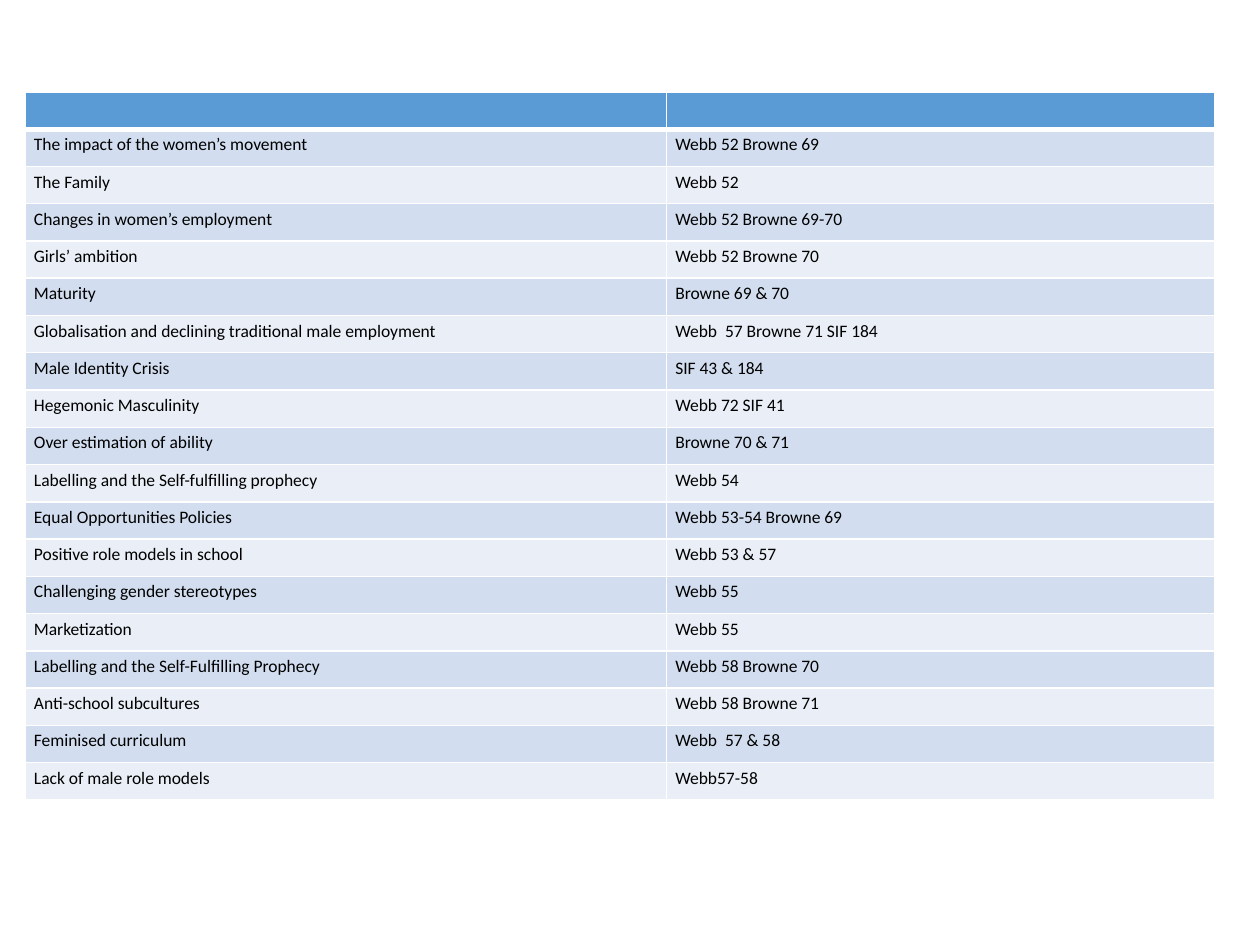
"""Build a slide that lists gender and education topics with their page references."""
from dataclasses import dataclass

from lxml.etree import SubElement
from pptx import Presentation
from pptx.dml.color import RGBColor
from pptx.oxml.ns import qn
from pptx.table import Table, _Cell
from pptx.util import Inches, Pt

COLORS = {"head": "5B9BD5", "dark": "D2DEEF", "light": "EAEFF7", "line": "FFFFFF", "text": "000000"}
FONT = {"name": "Calibri", "size": Pt(10), "bold": False}
INSETS = {
    "margin_left": Inches(0.07),
    "margin_right": Inches(0.07),
    "margin_top": Inches(0.04),
    "margin_bottom": Inches(0.04),
}
WIDTHS = (5.09, 4.35)
HEIGHT = 5.62


@dataclass(frozen=True)
class Topic:
    """A topic and the pages that cover it."""

    name: str = ""
    pages: str = ""


TOPICS = [
    Topic("The impact of the women’s movement", "Webb 52 Browne 69"),
    Topic("The Family", "Webb 52"),
    Topic("Changes in women’s employment", "Webb 52 Browne 69-70"),
    Topic("Girls’ ambition", "Webb 52 Browne 70"),
    Topic("Maturity", "Browne 69 & 70"),
    Topic("Globalisation and declining traditional male employment", "Webb  57 Browne 71 SIF 184"),
    Topic("Male Identity Crisis", "SIF 43 & 184"),
    Topic("Hegemonic Masculinity", "Webb 72 SIF 41"),
    Topic("Over estimation of ability", "Browne 70 & 71"),
    Topic("Labelling and the Self-fulfilling prophecy", "Webb 54"),
    Topic("Equal Opportunities Policies", "Webb 53-54 Browne 69"),
    Topic("Positive role models in school", "Webb 53 & 57"),
    Topic("Challenging gender stereotypes", "Webb 55"),
    Topic("Marketization", "Webb 55"),
    Topic("Labelling and the Self-Fulfilling Prophecy", "Webb 58 Browne 70"),
    Topic("Anti-school subcultures", "Webb 58 Browne 71"),
    Topic("Feminised curriculum", "Webb  57 & 58"),
    Topic("Lack of male role models", "Webb57-58"),
]


def set_edges(cell: _Cell, top: float, bottom: float) -> None:
    """Draw the four borders of a cell, with widths in points."""
    props = cell._tc.get_or_add_tcPr()
    for tag, width in {"lnL": 1, "lnR": 1, "lnT": top, "lnB": bottom}.items():
        line = SubElement(props, qn(f"a:{tag}"), w=str(Pt(width)))
        fill = SubElement(line, qn("a:solidFill"))
        SubElement(fill, qn("a:srgbClr"), val=COLORS["line"])


def set_text(cell: _Cell, text: str) -> None:
    """Write the text of a cell, or size its empty line."""
    for key, value in INSETS.items():
        setattr(cell, key, value)
    para = cell.text_frame.paragraphs[0]
    if not text:
        SubElement(para._p, qn("a:endParaRPr"), sz=str(int(FONT["size"].pt * 100)))
        return
    run = para.add_run()
    run.text = text
    for key, value in FONT.items():
        setattr(run.font, key, value)
    run.font.color.rgb = RGBColor.from_string(COLORS["text"])


def draw_row(table: Table, index: int, topic: Topic) -> None:
    """Fill one table row; the first row is the header band."""
    shade = "head" if index == 0 else "dark" if index % 2 else "light"
    for col, text in enumerate((topic.name, topic.pages)):
        cell = table.cell(index, col)
        set_edges(cell, top=3 if index == 1 else 1, bottom=3 if index == 0 else 1)
        cell.fill.solid()
        cell.fill.fore_color.rgb = RGBColor.from_string(COLORS[shade])
        set_text(cell, text)


def main() -> None:
    """Create the deck and save it."""
    deck = Presentation()
    deck.slide_width, deck.slide_height = Inches(10), Inches(7.5)
    slide = deck.slides.add_slide(deck.slide_layouts[6])
    rows = [Topic(), *TOPICS]
    frame = slide.shapes.add_table(
        len(rows), len(WIDTHS), Inches(0.2), Inches(0.73), Inches(sum(WIDTHS)), Inches(HEIGHT)
    )
    table = frame.table
    for col, width in zip(table.columns, WIDTHS):
        col.width = Inches(width)
    for index, topic in enumerate(rows):
        draw_row(table, index, topic)
    deck.save("out.pptx")


if __name__ == "__main__":
    main()
